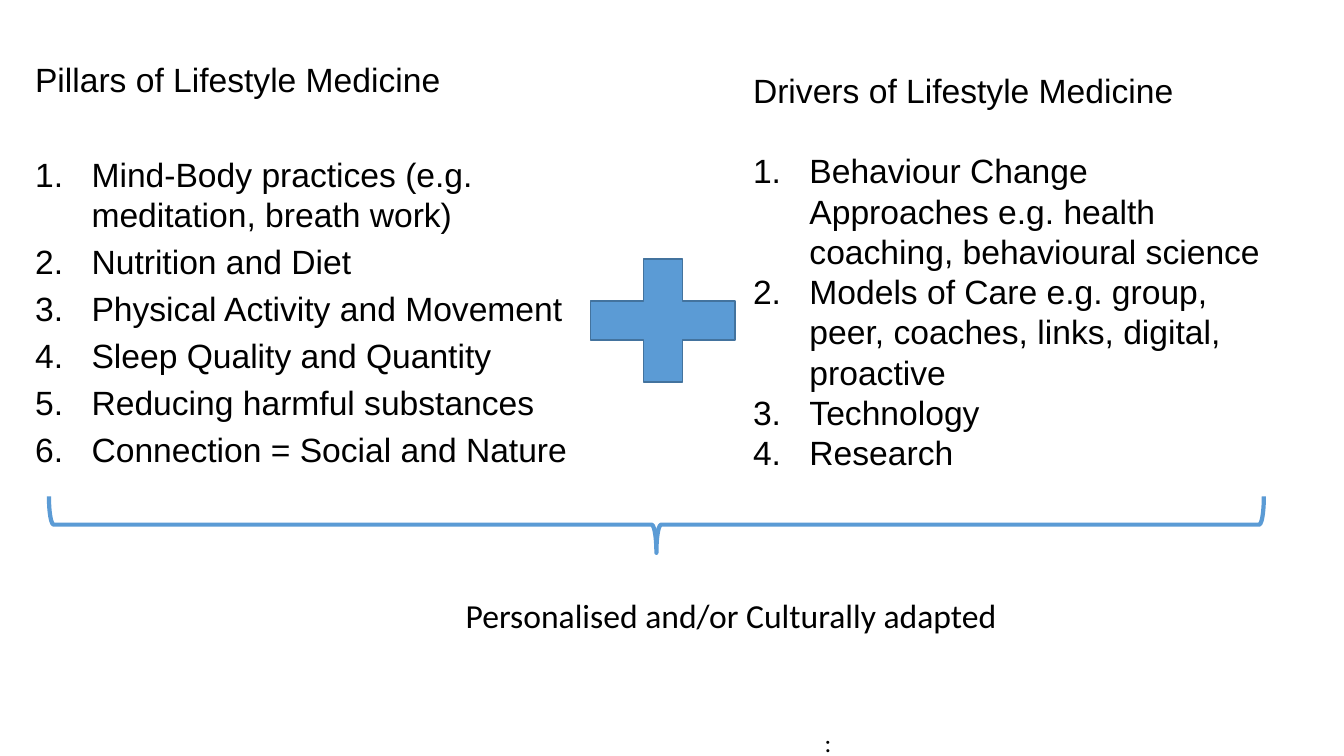
from pptx import Presentation
from pptx.dml.color import RGBColor
from pptx.enum.shapes import MSO_SHAPE
from pptx.enum.text import MSO_AUTO_SIZE
from pptx.util import Inches, Pt

deck = Presentation()
deck.slide_width, deck.slide_height = Inches(13.33), Inches(7.5)
slide = deck.slides.add_slide(deck.slide_layouts[6])
shapes = slide.shapes


def paint(color, shade):
    """Give a fill, line or font colour a solid hex shade."""
    color.rgb = RGBColor.from_string(shade)


def write(para, text, font="Arial", size=24):
    run = para.add_run()
    run.text = text
    run.font.name, run.font.size = font, Pt(size)
    paint(run.font.color, "000000")


# Numbered lists: box, gap below the heading, gap between items
lists = [
    ((0.25, 0.54, 5.63, 4.24), 38.4, 4.8, "Pillars of Lifestyle Medicine", [
        "Mind-Body practices (e.g. meditation, breath work)",
        "Nutrition and Diet",
        "Physical Activity and Movement",
        "Sleep Quality and Quantity",
        "Reducing harmful substances",
        "Connection = Social and Nature",
    ]),
    ((7.37, 0.64, 5.28, 4.14), 28.8, 0, "Drivers of Lifestyle Medicine", [
        "Behaviour Change Approaches e.g. health coaching, behavioural science",
        "Models of Care e.g. group, peer, coaches, links, digital, proactive",
        "Technology",
        "Research",
    ]),
]
indent = Inches(0.56)
for box, first, gap, head, items in lists:
    frame = shapes.add_textbox(*map(Inches, box)).text_frame
    frame.word_wrap = True
    write(frame.paragraphs[0], head)
    for i, item in enumerate(items):
        para = frame.add_paragraph()
        para.space_before = Pt(gap if i else first)
        props = para._p.get_or_add_pPr()
        props.set("marL", str(indent))
        props.set("indent", str(-indent))
        mark = props.makeelement(
            "{http://schemas.openxmlformats.org/drawingml/2006/main}buAutoNum",
            {"type": "arabicPeriod"})
        props.append(mark)
        write(para, item)

# Single lines
for box, text, size in [
    ((8.08, 7.17, 0.33, 0.4), ":", 18),
    ((4.52, 5.85, 5.52, 0.5), "Personalised and/or Culturally adapted", 24),
]:
    frame = shapes.add_textbox(*map(Inches, box)).text_frame
    frame.word_wrap = False
    frame.auto_size = MSO_AUTO_SIZE.SHAPE_TO_FIT_TEXT
    write(frame.paragraphs[0], text, "Calibri", size)

# Plus sign between the lists
plus = shapes.add_shape(MSO_SHAPE.MATH_PLUS, *map(Inches, (5.6, 2.35, 1.95, 1.66)))
plus.shadow.inherit = False
plus.fill.solid()
paint(plus.fill.fore_color, "5B9BD5")
paint(plus.line.color, "43739E")
plus.line.width = Pt(1)

# Brace turned to point down at the closing line
brace = shapes.add_shape(MSO_SHAPE.RIGHT_BRACE, *map(Inches, (6.23, -0.82, 0.56, 12.05)))
brace.rotation = 90
brace.shadow.inherit = False
brace.fill.background()
paint(brace.line.color, "5B9BD5")
brace.line.width = Pt(3)

deck.save("out.pptx")
